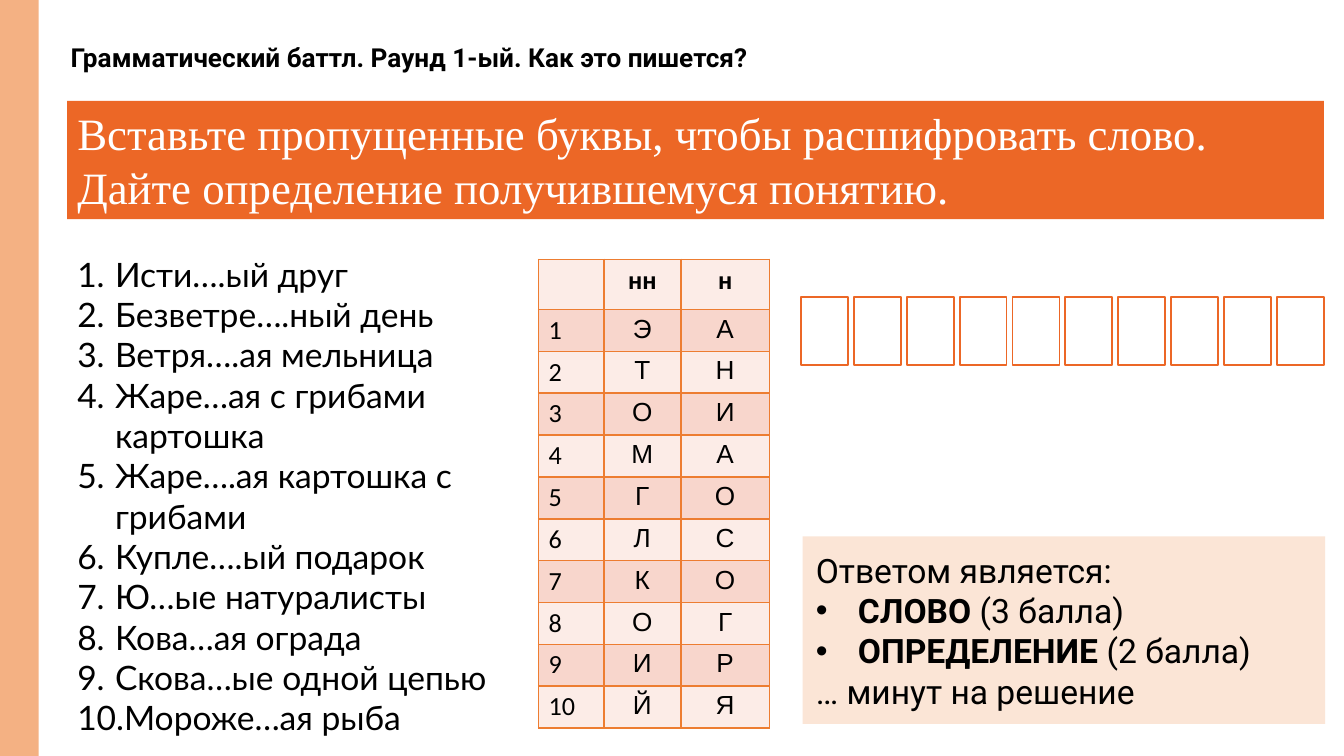
"""Build the grammar battle slide with its word list, letter key and answer boxes."""
from dataclasses import dataclass

from lxml.etree import SubElement
from pptx import Presentation
from pptx.dml.color import RGBColor
from pptx.enum.shapes import MSO_SHAPE
from pptx.enum.text import MSO_ANCHOR, PP_ALIGN
from pptx.oxml.ns import qn
from pptx.util import Pt


@dataclass(frozen=True)
class Theme:
    orange: str = "EC6726"
    side: str = "F4B183"
    answer: str = "FBE5D6"
    light: str = "FCECE7"
    dark: str = "F8D6CC"
    border: str = "ED7D31"
    white: str = "FFFFFF"
    black: str = "000000"
    small: float = 14
    body: float = 18
    large: float = 24


@dataclass(frozen=True)
class Box:
    left: float
    top: float
    width: float
    height: float

    def lengths(self) -> list:
        return [Pt(side) for side in (self.left, self.top, self.width, self.height)]


@dataclass(frozen=True)
class Style:
    font: str
    size: float
    color: str = "000000"
    bold: bool = False


@dataclass(frozen=True)
class Line:
    runs: tuple
    bullet: str = ""
    indent: float = 0
    spacing: float = 1.0


THEME = Theme()
WORDS = (
    "Исти….ый друг", "Безветре….ный день", "Ветря….ая мельница",
    "Жаре…ая с грибами картошка", "Жаре….ая картошка с грибами",
    "Купле….ый подарок", "Ю…ые натуралисты", "Кова…ая ограда",
    "Скова…ые одной цепью", "Мороже…ая рыба",
)
DOUBLE_LETTERS = "ЭТОМГЛКОИЙ"
SINGLE_LETTERS = "АНИАОСОГРЯ"


def apply_format(target, values: dict) -> None:
    for name, value in values.items():
        setattr(target, name, value)


def add_run(paragraph, text: str, style: Style) -> None:
    run = paragraph.add_run()
    run.text = text
    apply_format(run.font, {"name": style.font, "size": Pt(style.size), "bold": style.bold})
    run.font.color.rgb = RGBColor.from_string(style.color)


def add_bullet(paragraph, bullet: str, indent: float) -> None:
    properties = paragraph._p.get_or_add_pPr()
    properties.set("marL", str(Pt(indent)))
    properties.set("indent", str(-Pt(indent)))
    if bullet == "1.":
        SubElement(properties, qn("a:buFont")).set("typeface", "+mj-lt")
        SubElement(properties, qn("a:buAutoNum")).set("type", "arabicPeriod")
    else:
        SubElement(properties, qn("a:buFont")).set("typeface", "Arial")
        SubElement(properties, qn("a:buChar")).set("char", bullet)


def fill_text(frame, lines: list[Line], inset: tuple, anchor=MSO_ANCHOR.TOP) -> None:
    across, down = (Pt(margin) for margin in inset)
    apply_format(frame, {
        "word_wrap": True, "vertical_anchor": anchor, "margin_left": across,
        "margin_right": across, "margin_top": down, "margin_bottom": down,
    })
    for index, line in enumerate(lines):
        paragraph = frame.add_paragraph() if index else frame.paragraphs[0]
        apply_format(paragraph, {"alignment": PP_ALIGN.LEFT, "line_spacing": line.spacing})
        if line.bullet:
            add_bullet(paragraph, line.bullet, line.indent)
        for text, style in line.runs:
            add_run(paragraph, text, style)


def add_rectangle(slide, box: Box, fill: str, outline: str = ""):
    rectangle = slide.shapes.add_shape(MSO_SHAPE.RECTANGLE, *box.lengths())
    rectangle.shadow.inherit = False
    rectangle.fill.solid()
    rectangle.fill.fore_color.rgb = RGBColor.from_string(fill)
    if outline:
        rectangle.line.color.rgb = RGBColor.from_string(outline)
        rectangle.line.width = Pt(1)
    else:
        rectangle.line.fill.background()
    return rectangle


def add_borders(cell, color: str) -> None:
    properties = cell._tc.get_or_add_tcPr()
    for position, side in enumerate(("lnL", "lnR", "lnT", "lnB")):
        border = properties.makeelement(qn(f"a:{side}"), {"w": str(Pt(1))})
        SubElement(SubElement(border, qn("a:solidFill")), qn("a:srgbClr")).set("val", color)
        properties.insert(position, border)


def add_letter_key(slide, box: Box, widths: tuple) -> None:
    rows = [("", "нн", "н")]
    rows += [(str(number), *pair)
             for number, pair in enumerate(zip(DOUBLE_LETTERS, SINGLE_LETTERS), 1)]
    key = slide.shapes.add_table(len(rows), len(widths), *box.lengths()).table
    apply_format(key, {"first_row": False, "horz_banding": False})
    for column, width in zip(key.columns, widths):
        column.width = Pt(width)
    for row_index, row in enumerate(rows):
        key.rows[row_index].height = Pt(box.height / len(rows))
        for column_index, text in enumerate(row):
            cell = key.cell(row_index, column_index)
            apply_format(cell, {"margin_left": Pt(5.4), "margin_right": Pt(5.4),
                                "margin_top": Pt(2.6), "margin_bottom": Pt(2.6)})
            cell.fill.solid()
            cell.fill.fore_color.rgb = RGBColor.from_string(
                THEME.dark if row_index % 2 else THEME.light)
            add_borders(cell, THEME.border)
            paragraph = cell.text_frame.paragraphs[0]
            paragraph.alignment = PP_ALIGN.CENTER if column_index else PP_ALIGN.LEFT
            font = "Arial" if row_index and column_index else "Calibri"
            add_run(paragraph, text, Style(font, THEME.small, THEME.black, row_index == 0))


def main() -> None:
    presentation = Presentation()
    apply_format(presentation, {"slide_width": Pt(720), "slide_height": Pt(405)})
    slide = presentation.slides.add_slide(presentation.slide_layouts[6])
    inset = (5.4, 2.7)

    heading = slide.shapes.add_textbox(*Box(32.4, 13, 430.6, 36.7).lengths())
    heading_style = Style("Roboto", THEME.small, THEME.black, True)
    fill_text(heading.text_frame, [Line(
        (("Грамматический баттл. Раунд 1-ый. Как это пишется?", heading_style),),
        spacing=0.9)], inset, MSO_ANCHOR.MIDDLE)

    task = add_rectangle(slide, Box(36, 54, 673.2, 63.4), THEME.orange)
    task_style = Style("Times New Roman", THEME.large, THEME.white)
    fill_text(task.text_frame, [Line(((
        "Вставьте пропущенные буквы, чтобы расшифровать слово. "
        "Дайте определение получившемуся понятию.", task_style),))], inset)

    word_list = slide.shapes.add_textbox(*Box(36, 133.2, 247, 267).lengths())
    word_style = Style("Lato", THEME.body, THEME.black)
    fill_text(word_list.text_frame,
              [Line(((word, word_style),), "1.", 20.25) for word in WORDS], inset)

    add_letter_key(slide, Box(288.5, 139, 123.8, 246.95), (35, 41.2, 47.6))

    for index in range(len(WORDS)):
        add_rectangle(slide, Box(429.1 + 28.32 * index, 159.1, 25.2, 36.3),
                      THEME.white, THEME.orange)

    answer = add_rectangle(slide, Box(430, 287.3, 280, 100.6), THEME.answer)
    plain = Style("Roboto", THEME.body, THEME.black)
    strong = Style("Roboto", THEME.body, THEME.black, True)
    fill_text(answer.text_frame, [
        Line((("Ответом является:", plain),)),
        Line((("СЛОВО", strong), (" (3 балла)", plain)), "•", 22.5),
        Line((("ОПРЕДЕЛЕНИЕ", strong), (" (2 балла)", plain)), "•", 22.5),
        Line((("… минут на решение", plain),)),
    ], (7.2, 7.2))

    add_rectangle(slide, Box(0, 0, 20.7, 405), THEME.side)
    presentation.save("out.pptx")


if __name__ == "__main__":
    main()
